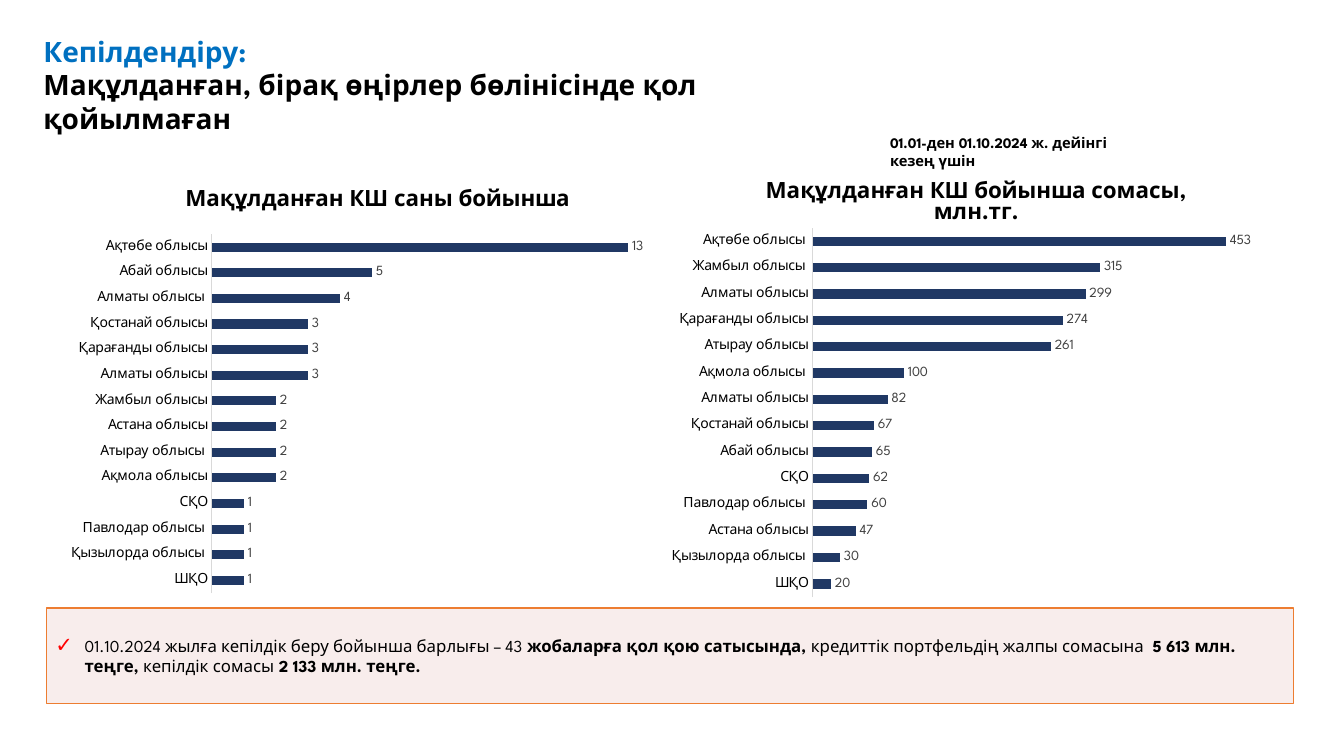
"""Build the slide on guarantees approved but not yet signed, by region."""
import lxml.etree
import pptx
import pptx.chart.data
import pptx.dml.color
import pptx.enum.chart
import pptx.enum.text
import pptx.oxml.ns
import pptx.util

qn = pptx.oxml.ns.qn


def paint(code):
    return pptx.dml.color.RGBColor.from_string(code)


def node(parent, tag, **attrs):
    return lxml.etree.SubElement(parent, qn(tag), attrs)


class Deck:
    """Hold the style and the current slide; boxes are percentages of the slide."""

    face, ink, navy, grey = "League Spartan", "000000", "203864", "404040"

    def __init__(self):
        self.show = pptx.Presentation()
        self.show.slide_width = pptx.util.Inches(13.33)
        self.show.slide_height = pptx.util.Inches(7.5)
        self.slide = self.show.slides.add_slide(self.show.slide_layouts[1])

    def area(self, box):
        wide, high = self.show.slide_width, self.show.slide_height
        return [int(part * side / 100) for part, side in zip(box, (wide, high) * 2)]

    def place(self, shape, box):
        shape.left, shape.top, shape.width, shape.height = self.area(box)
        frame = shape.text_frame
        frame.word_wrap = True
        frame.auto_size = pptx.enum.text.MSO_AUTO_SIZE.NONE
        return frame

    def style(self, font, size, bold=None, color=ink):
        font.name, font.size, font.bold = self.face, pptx.util.Pt(size), bold
        font.color.rgb = paint(color)

    def title(self, box, lead, text):
        frame = self.place(self.slide.shapes.title, box)
        frame.vertical_anchor = pptx.enum.text.MSO_ANCHOR.TOP
        para = frame.paragraphs[0]
        para.alignment = pptx.enum.text.PP_ALIGN.LEFT
        self.style(para.font, 20, True)
        run = para.add_run()
        run.text = lead
        run.font.color.rgb = paint("0070C0")
        para.add_line_break()
        para.add_run().text = text

    def label(self, box, text):
        frame = self.place(self.slide.shapes.add_textbox(0, 0, 0, 0), box)
        para = frame.paragraphs[0]
        para.text = text
        self.style(para.font, 10.5, True)

    def note(self, box, parts):
        shape = self.slide.placeholders[1]
        frame = self.place(shape, box)
        shape.fill.solid()
        shape.fill.fore_color.rgb = paint("F2DCDB")
        tint = next(shape.element.spPr.iter(qn("a:srgbClr")))
        node(tint, "a:alpha", val="50000")
        shape.line.color.rgb = paint("ED7D31")
        shape.line.width = pptx.util.Pt(1)
        frame.vertical_anchor = pptx.enum.text.MSO_ANCHOR.MIDDLE
        frame.margin_left = frame.margin_right = pptx.util.Inches(0.08)
        frame.margin_top = frame.margin_bottom = pptx.util.Inches(0.04)
        para = frame.paragraphs[0]
        para.space_before, para.space_after = pptx.util.Pt(0), pptx.util.Pt(6)
        props = para._p.get_or_add_pPr()
        props.set("marL", str(pptx.util.Inches(0.3)))
        props.set("indent", str(pptx.util.Inches(-0.29)))
        node(node(props, "a:buClr"), "a:srgbClr", val="FF0000")
        node(props, "a:buSzPct", val="125000")
        node(props, "a:buChar", char="✓")
        self.style(para.font, 12)
        for spot, text in enumerate(parts):
            run = para.add_run()
            run.text = text
            run.font.bold = spot % 2 == 1

    def fix(self, chart, tag, **spots):
        """Set the manual layout of a chart part in shares of the chart."""
        part = next(chart.element.iter(qn(tag)))
        layout = part.find(qn("c:layout"))
        if layout is None:
            layout = lxml.etree.Element(qn("c:layout"))
            part.insert(0, layout)
        manual = node(layout, "c:manualLayout")
        if "w" in spots:
            node(manual, "c:layoutTarget", val="inner")
        for mode in ("c:xMode", "c:yMode"):
            node(manual, mode, val="edge")
        for key, share in spots.items():
            node(manual, "c:" + key, val=str(share))

    def bars(self, box, title, rows, top, head, plot):
        kinds = pptx.enum.chart
        data = pptx.chart.data.CategoryChartData(number_format="#,##0")
        data.categories = [name for name, _ in rows]
        data.add_series("Series 1", [value for _, value in rows])
        chart = self.slide.shapes.add_chart(
            kinds.XL_CHART_TYPE.BAR_CLUSTERED, *self.area(box), data).chart
        self.style(chart.font, 10)
        chart.has_legend = False
        frame = chart.chart_title.text_frame
        frame.text = title
        for para in frame.paragraphs:
            self.style(para.font, 16, True)
        self.fix(chart, "c:title", **head)
        self.fix(chart, "c:plotArea", **plot)

        axis = chart.category_axis
        axis.major_tick_mark = kinds.XL_TICK_MARK.NONE
        axis.format.line.color.rgb = paint("D9D9D9")
        axis.format.line.width = pptx.util.Pt(0.75)
        self.style(axis.tick_labels.font, 10)
        scale = chart.value_axis
        scale.minimum_scale, scale.maximum_scale = 0, top
        scale.has_major_gridlines = False
        scale.visible = False

        group = chart.plots[0]
        group.gap_width, group.vary_by_categories = 182, False
        fill = group.series[0].format.fill
        fill.solid()
        fill.fore_color.rgb = paint(self.navy)
        group.has_data_labels = True
        labels = group.data_labels
        labels.show_value = True
        labels.position = kinds.XL_LABEL_POSITION.OUTSIDE_END
        labels.number_format, labels.number_format_is_linked = "#,##0", False
        self.style(labels.font, 10, color=self.grey)


COUNT = [
    (" ШҚО", 1), ("Қызылорда облысы ", 1), ("Павлодар облысы ", 1), ("СҚО", 1),
    ("Ақмола облысы", 2), ("Атырау облысы ", 2), (" Астана облысы", 2),
    ("Жамбыл облысы", 2), ("Алматы облысы", 3), (" Қарағанды облысы", 3),
    ("Қостанай облысы", 3), (" Алматы облысы ", 4), ("Абай облысы", 5),
    ("Ақтөбе облысы", 13),
]
SUMS = [
    ("ШҚО", 20), ("Қызылорда облысы ", 30), ("Астана облысы", 47),
    ("Павлодар облысы ", 60), ("СҚО", 62), ("Абай облысы", 65),
    ("Қостанай облысы", 67), ("Алматы облысы", 82), ("Ақмола облысы ", 100),
    ("Атырау облысы", 261), ("Қарағанды облысы", 274), (" Алматы облысы", 299),
    ("Жамбыл облысы ", 315), ("Ақтөбе облысы ", 453),
]


def main():
    deck = Deck()
    deck.title((2.48, 3.87, 59.04, 14.8), "Кепілдендіру:",
               "Мақұлданған, бірақ өңірлер бөлінісінде қол қойылмаған")
    deck.label((65.49, 17.07, 19.35, 3.73), "01.01-ден 01.10.2024 ж. дейінгі кезең үшін")
    deck.note((3.45, 80.4, 92.8, 12.67), [
        "01.10.2024 жылға кепілдік беру бойынша барлығы – 43 ",
        "жобаларға қол қою сатысында, ",
        "кредиттік портфельдің жалпы сомасына  ",
        "5 613 млн. теңге, ",
        "кепілдік сомасы",
        " 2 133 млн. теңге.",
    ])
    deck.bars((4.35, 23.73, 45.69, 55.87), "Мақұлданған КШ саны бойынша", COUNT, 14,
              dict(x=0.2, y=0.01), dict(x=0.25, y=0.13, w=0.73, h=0.85))
    deck.bars((48.84, 20.53, 46.51, 60.27), "Мақұлданған КШ бойынша сомасы,\nмлн.тг.",
              SUMS, 500, dict(x=0.17, y=0.05), dict(x=0.25, y=0.16, w=0.73, h=0.81))
    deck.show.save("out.pptx")


if __name__ == "__main__":
    main()
